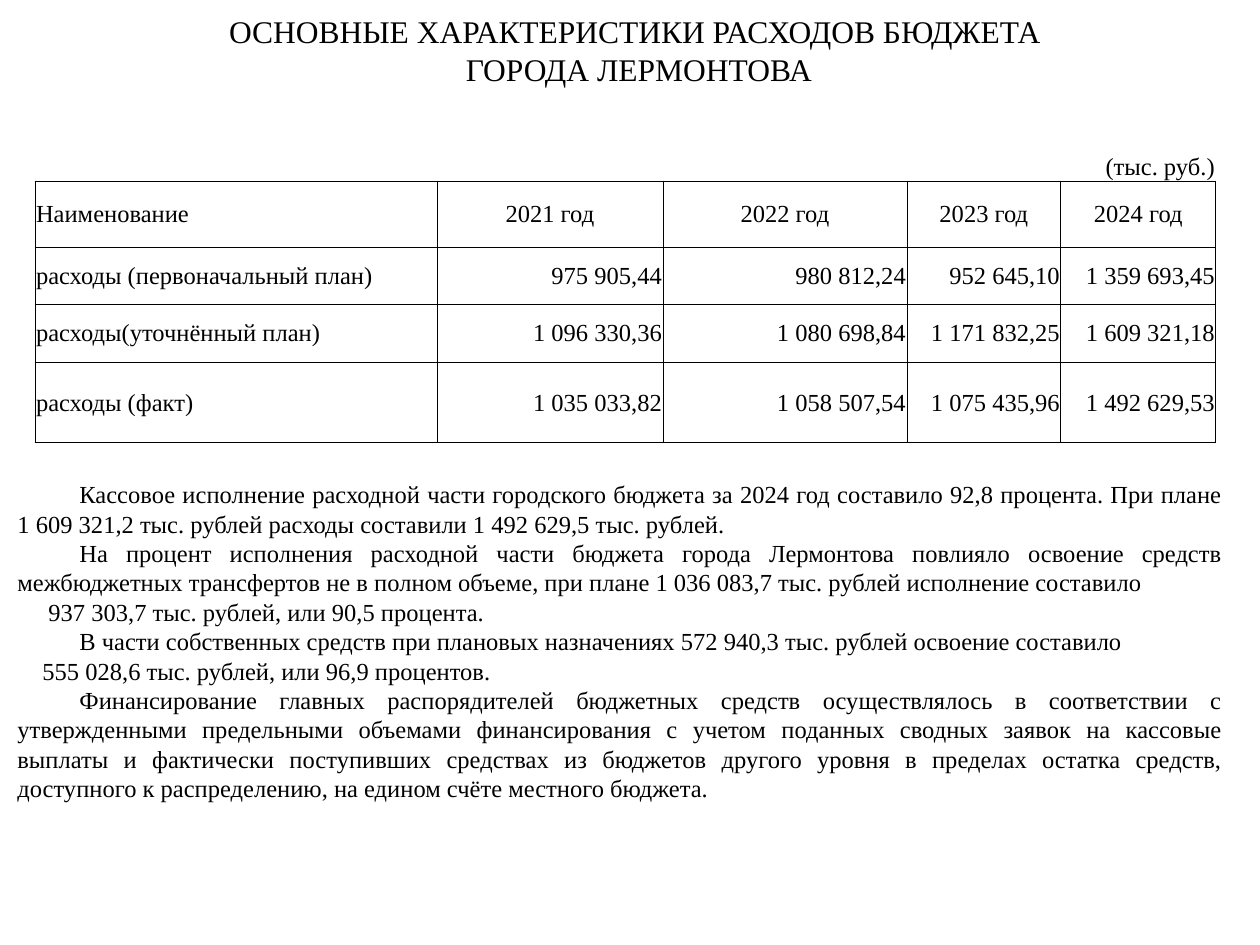
import pptx
import pptx.util
import pptx.dml.color
import pptx.enum.text
import pptx.oxml
import pptx.oxml.ns

PX = 914400 // 126
COLORS = {"text": "000000", "border": "000000"}
FONT = "Times New Roman"
ALIGN = pptx.enum.text.PP_ALIGN
ANCHOR = pptx.enum.text.MSO_ANCHOR

TITLE = ["ОСНОВНЫЕ ХАРАКТЕРИСТИКИ РАСХОДОВ БЮДЖЕТА ", "ГОРОДА ЛЕРМОНТОВА"]
UNIT = "(тыс. руб.)"
ROWS = [
    ("Наименование", "2021 год", "2022 год", "2023 год", "2024 год"),
    ("расходы (первоначальный план)", "975 905,44", "980 812,24", "952 645,10", "1 359 693,45"),
    ("расходы(уточнённый план)", "1 096 330,36", "1 080 698,84", "1 171 832,25", "1 609 321,18"),
    ("расходы (факт)", "1 035 033,82", "1 058 507,54", "1 075 435,96", "1 492 629,53"),
]
COL_WIDTHS = [402, 226, 244, 154, 155]
ROW_HEIGHTS = [65, 66, 57, 58, 81]

# (first-line indent in px, text)
BODY = [
    (62, "Кассовое исполнение расходной части городского бюджета за 2024 год составило "
         "92,8 процента. При плане 1 609 321,2 тыс. рублей расходы составили "
         "1 492 629,5 тыс. рублей."),
    (62, "На процент исполнения расходной части бюджета города Лермонтова повлияло освоение "
         "средств межбюджетных трансфертов не в полном объеме, при плане 1 036 083,7 тыс. "
         "рублей исполнение составило"),
    (31, "937 303,7 тыс. рублей, или 90,5 процента."),
    (62, "В части собственных средств при плановых назначениях 572 940,3 тыс. рублей "
         "освоение составило"),
    (25, "555 028,6 тыс. рублей, или 96,9 процентов."),
    (62, "Финансирование главных распорядителей бюджетных средств осуществлялось в "
         "соответствии с утвержденными предельными объемами финансирования с учетом "
         "поданных сводных заявок на кассовые выплаты и фактически поступивших средствах "
         "из бюджетов другого уровня в пределах остатка средств, доступного к "
         "распределению, на едином счёте местного бюджета."),
]


def px(n):
    return pptx.util.Emu(n * PX)


def write(p, text, size=14, align=ALIGN.LEFT, indent=0):
    p.alignment = align
    if indent:
        pPr = p._p.get_or_add_pPr()
        pPr.set("marL", "0")
        pPr.set("indent", str(px(indent)))
    r = p.add_run()
    r.text = text
    r.font.size = pptx.util.Pt(size)
    r.font.name = FONT
    r.font.color.rgb = pptx.dml.color.RGBColor.from_string(COLORS["text"])


def add_text(slide, box, paragraphs, **fmt):
    """Add a wrapped text box; paragraphs are (indent, text) pairs."""
    tf = slide.shapes.add_textbox(*map(px, box)).text_frame
    tf.word_wrap = True
    for i, (indent, text) in enumerate(paragraphs):
        p = tf.add_paragraph() if i else tf.paragraphs[0]
        write(p, text, indent=indent, **fmt)


def set_borders(cell, visible):
    """Draw the sides named in visible (letters of LRTB) and hide the others."""
    tcPr = cell._tc.get_or_add_tcPr()
    ns = pptx.oxml.ns.nsdecls("a")
    for i, side in enumerate("LRTB"):
        fill = (f'<a:solidFill><a:srgbClr val="{COLORS["border"]}"/></a:solidFill>'
                if side in visible else "<a:noFill/>")
        line = pptx.oxml.parse_xml(f'<a:ln{side} {ns} w="6350">{fill}</a:ln{side}>')
        tcPr.insert(i, line)


def add_budget_table(slide):
    cells = [("", "", "", "", UNIT)] + ROWS
    frame = slide.shapes.add_table(len(cells), len(COL_WIDTHS), px(35), px(116),
                                   px(sum(COL_WIDTHS)), px(sum(ROW_HEIGHTS)))
    table = frame.table
    table.first_row = table.horz_banding = False
    for col, width in zip(table.columns, COL_WIDTHS):
        col.width = px(width)
    for i, (row, height) in enumerate(zip(cells, ROW_HEIGHTS)):
        table.rows[i].height = px(height)
        for j, text in enumerate(row):
            cell = table.cell(i, j)
            cell.fill.background()
            set_borders(cell, "LRTB" if i else "B")
            cell.margin_left = cell.margin_right = cell.margin_top = px(1)
            cell.margin_bottom = 0
            cell.vertical_anchor = ANCHOR.MIDDLE if i else ANCHOR.BOTTOM
            if text:
                align = (ALIGN.LEFT if j == 0 else
                         ALIGN.CENTER if i == 1 else ALIGN.RIGHT)
                write(cell.text_frame.paragraphs[0], text, align=align)


def main():
    prs = pptx.Presentation()
    prs.slide_width, prs.slide_height = px(1260), px(945)
    slide = prs.slides.add_slide(prs.slide_layouts[6])
    add_budget_table(slide)
    add_text(slide, (64, 6, 1150, 89), [(0, t) for t in TITLE], size=18, align=ALIGN.CENTER)
    add_text(slide, (5, 473, 1230, 339), BODY, align=ALIGN.JUSTIFY)
    prs.save("out.pptx")


if __name__ == "__main__":
    main()
